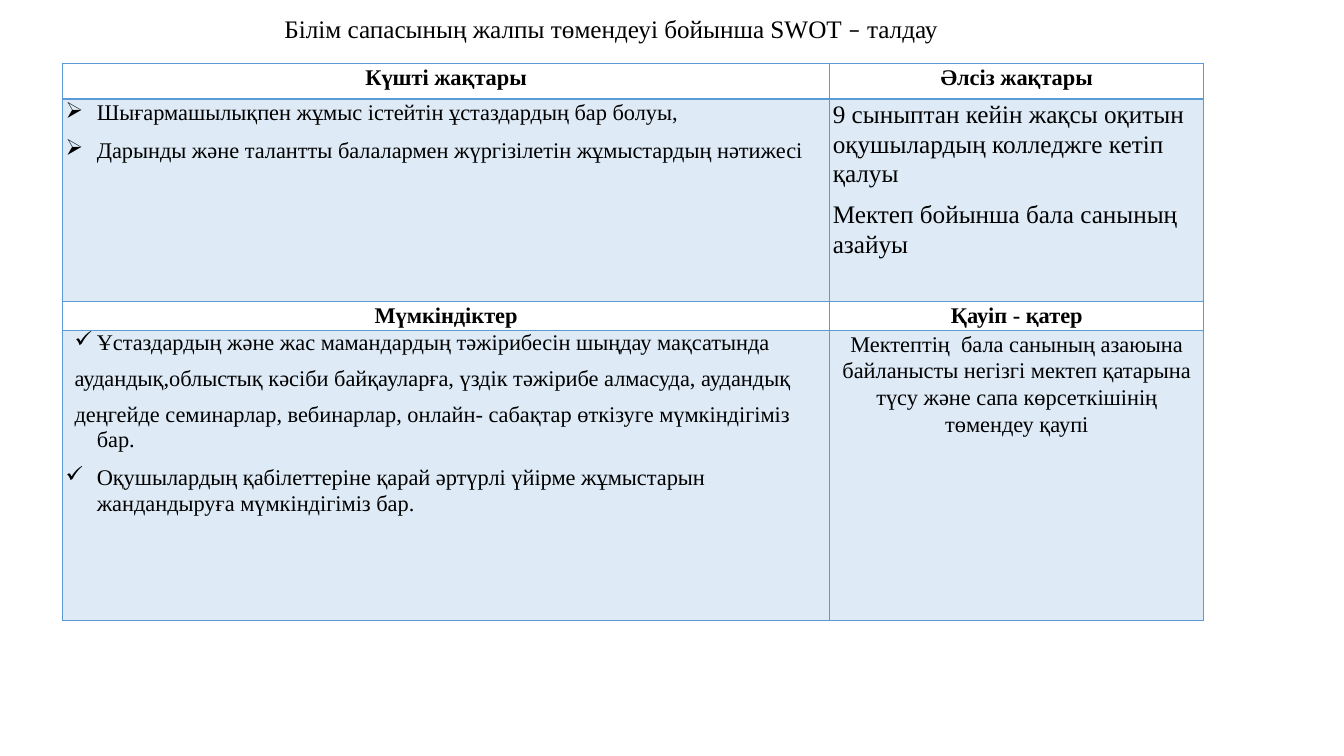
from dataclasses import dataclass

from lxml import etree
from pptx import Presentation
from pptx.dml.color import RGBColor
from pptx.enum.text import MSO_ANCHOR, PP_ALIGN
from pptx.oxml.ns import qn
from pptx.util import Inches, Pt

LEFT, CENTER = PP_ALIGN.LEFT, PP_ALIGN.CENTER
MIDDLE = MSO_ANCHOR.MIDDLE


@dataclass(frozen=True)
class Theme:
    font: str = "Times New Roman"
    dash_font: str = "Calibri"
    text: str = "000000"
    accent: str = "5B9BD5"
    tint_percent: int = 20
    body_size: int = 16
    large_size: int = 18
    border: int = 1
    heading_border: int = 2


THEME = Theme()


@dataclass(frozen=True)
class Item:
    text: str
    bullet: str = ""
    indent: float = 0
    hanging: float = 0
    line_spacing: float = 1.07
    size: int = THEME.body_size
    bold: bool = False
    align: PP_ALIGN = LEFT


@dataclass(frozen=True)
class Cell:
    items: tuple[Item, ...]
    tinted: bool = True
    top: int = THEME.border
    bottom: int = THEME.border


def heading(text: str, **borders: int) -> Cell:
    return Cell((Item(text, bold=True, align=CENTER),), tinted=False, **borders)


def bulleted(text: str, bullet: str) -> Item:
    return Item(text, bullet, indent=0.31, hanging=0.31)


def loose(text: str, bullet: str = "") -> Item:
    """A hanging item with single line spacing."""
    return Item(text, bullet, indent=0.31, hanging=0.22, line_spacing=1.0)


TITLE_RUNS = (
    ("Білім сапасының жалпы төмендеуі бойынша SWOT ", THEME.font),
    ("–", THEME.dash_font),
    (" талдау", THEME.font),
)
COLUMN_WIDTHS = (7.61, 3.71)
ROW_HEIGHTS = (0.35, 2.01, 0.29, 2.88)
SWOT_ROWS = (
    (
        heading("Күшті жақтары", bottom=THEME.heading_border),
        heading("Әлсіз жақтары", bottom=THEME.heading_border),
    ),
    (
        Cell((
            bulleted("Шығармашылықпен жұмыс істейтін ұстаздардың бар болуы,", "➢"),
            bulleted("Дарынды және талантты балалармен жүргізілетін жұмыстардың нәтижесі", "➢"),
        ), top=THEME.heading_border),
        Cell((
            Item("9 сыныптан кейін жақсы оқитын оқушылардың колледжге кетіп қалуы",
                 size=THEME.large_size),
            Item("Мектеп бойынша бала санының азайуы", size=THEME.large_size),
        ), top=THEME.heading_border),
    ),
    (heading("Мүмкіндіктер"), heading("Қауіп - қатер")),
    (
        Cell((
            loose("Ұстаздардың және жас мамандардың тәжірибесін шыңдау мақсатында", "✓"),
            loose("аудандық,облыстық кәсіби байқауларға, үздік тәжірибе алмасуда, аудандық"),
            loose("деңгейде семинарлар, вебинарлар, онлайн- сабақтар өткізуге мүмкіндігіміз бар."),
            bulleted("Оқушылардың қабілеттеріне қарай әртүрлі үйірме жұмыстарын "
                     "жандандыруға мүмкіндігіміз бар.", "✓"),
        )),
        Cell((
            Item("Мектептің  бала санының азаюына байланысты негізгі мектеп қатарына "
                 "түсу және сапа көрсеткішінің төмендеу қаупі", align=CENTER),
        )),
    ),
)


def add_text(paragraph, text: str, *, size: int, font: str = THEME.font,
             bold: bool = False, color: str = THEME.text) -> None:
    run = paragraph.add_run()
    run.text = text
    run.font.name = font
    run.font.size = Pt(size)
    run.font.bold = bold
    run.font.color.rgb = RGBColor.from_string(color)


def add_item(paragraph, item: Item) -> None:
    paragraph.alignment = item.align
    paragraph.line_spacing = item.line_spacing
    paragraph.space_after = Pt(8)
    properties = paragraph._p.get_or_add_pPr()
    if item.indent:
        properties.set("marL", str(Inches(item.indent)))
        properties.set("indent", str(-Inches(item.hanging)))
    if item.bullet:
        etree.SubElement(properties, qn("a:buChar"), char=item.bullet)
    add_text(paragraph, item.text, size=item.size, bold=item.bold)


def set_borders(table_cell, cell: Cell) -> None:
    properties = table_cell._tc.get_or_add_tcPr()
    widths = {"lnL": THEME.border, "lnR": THEME.border, "lnT": cell.top, "lnB": cell.bottom}
    for position, (side, width) in enumerate(widths.items()):
        line = etree.Element(qn(f"a:{side}"), w=str(Pt(width)))
        fill = etree.SubElement(line, qn("a:solidFill"))
        etree.SubElement(fill, qn("a:srgbClr"), val=THEME.accent)
        properties.insert(position, line)


def set_fill(table_cell, tinted: bool) -> None:
    if not tinted:
        table_cell.fill.background()
        return
    table_cell.fill.solid()
    table_cell.fill.fore_color.rgb = RGBColor.from_string(THEME.accent)
    color = table_cell._tc.tcPr.find(f"{qn('a:solidFill')}/{qn('a:srgbClr')}")
    etree.SubElement(color, qn("a:alpha"), val=str(THEME.tint_percent * 1000))


def fill_cell(table_cell, cell: Cell) -> None:
    table_cell.margin_left = table_cell.margin_right = Inches(0.03)
    table_cell.margin_top = table_cell.margin_bottom = 0
    set_fill(table_cell, cell.tinted)
    set_borders(table_cell, cell)
    text_frame = table_cell.text_frame
    for index, item in enumerate(cell.items):
        add_item(text_frame.add_paragraph() if index else text_frame.paragraphs[0], item)


def add_swot_table(slide) -> None:
    table = slide.shapes.add_table(
        len(ROW_HEIGHTS), len(COLUMN_WIDTHS), Inches(0.62), Inches(0.63),
        Inches(sum(COLUMN_WIDTHS)), Inches(sum(ROW_HEIGHTS))).table
    table.first_row = table.horz_banding = False
    for column, width in zip(table.columns, COLUMN_WIDTHS):
        column.width = Inches(width)
    for row, height, cells in zip(table.rows, ROW_HEIGHTS, SWOT_ROWS):
        row.height = Inches(height)
        for table_cell, cell in zip(row.cells, cells):
            fill_cell(table_cell, cell)


def add_title(slide) -> None:
    box = slide.shapes.add_textbox(Inches(2.72), Inches(0.08), Inches(6.68), Inches(0.4))
    text_frame = box.text_frame
    text_frame.word_wrap = False
    text_frame.vertical_anchor = MIDDLE
    paragraph = text_frame.paragraphs[0]
    paragraph.alignment = CENTER
    for text, font in TITLE_RUNS:
        add_text(paragraph, text, size=THEME.large_size, font=font)


def main() -> None:
    presentation = Presentation()
    presentation.slide_width = Inches(13.33)
    presentation.slide_height = Inches(7.5)
    slide = presentation.slides.add_slide(presentation.slide_layouts[6])
    add_swot_table(slide)
    add_title(slide)
    presentation.save("out.pptx")


if __name__ == "__main__":
    main()
